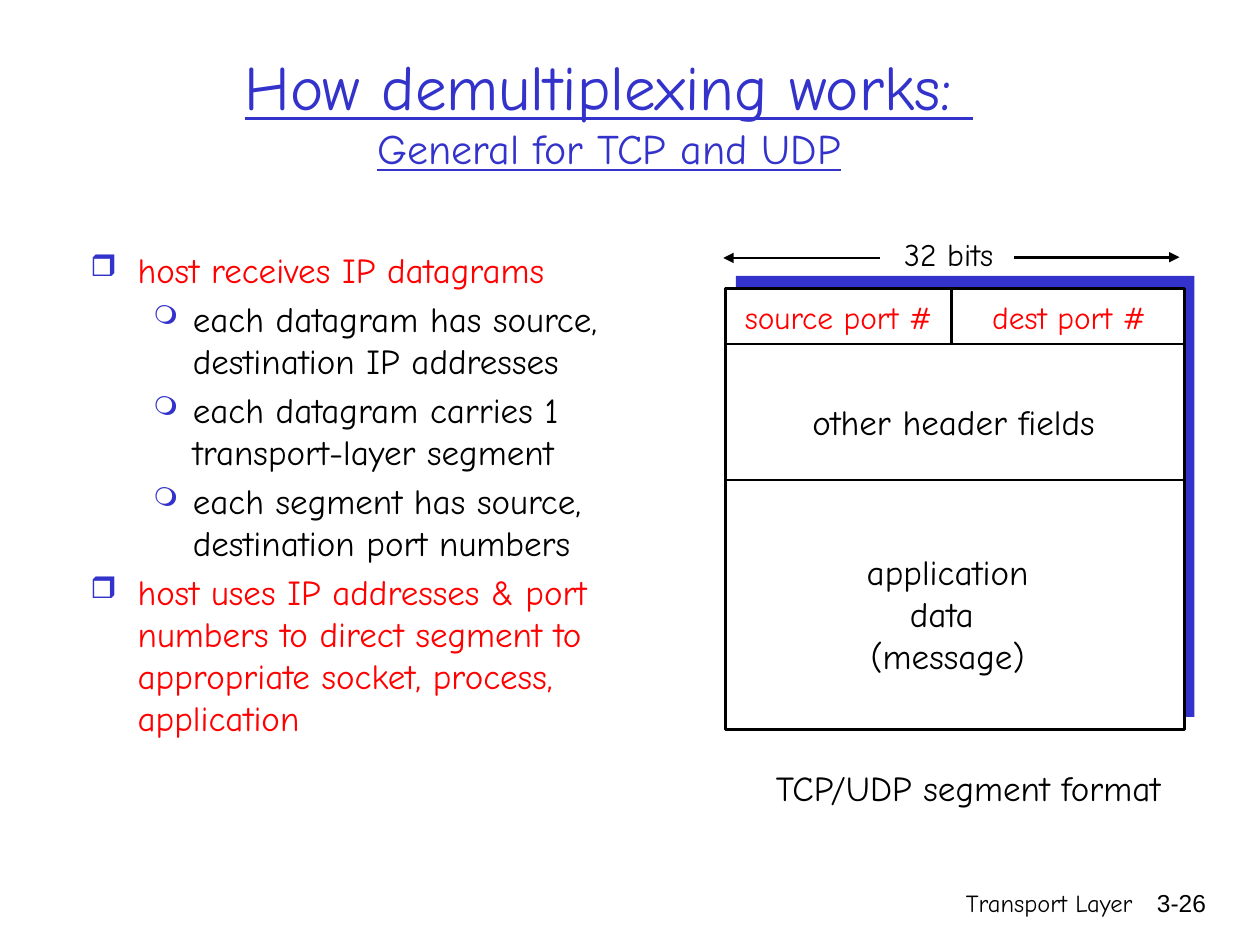
import copy

import pptx
import pptx.dml.color
import pptx.enum.shapes
import pptx.enum.text
import pptx.oxml.ns
import pptx.util
from lxml import etree

Pt = pptx.util.Pt
RGBColor = pptx.dml.color.RGBColor
ALIGN = pptx.enum.text.PP_ALIGN
ANCHOR = pptx.enum.text.MSO_ANCHOR
qn = pptx.oxml.ns.qn

BLUE = RGBColor(0x33, 0x33, 0xCC)
RED = RGBColor(0xFF, 0x00, 0x00)
BLACK = RGBColor(0x00, 0x00, 0x00)
WHITE = RGBColor(0xFF, 0xFF, 0xFF)
FONT = "Comic Neue"

SEGMENT_LEFT, SEGMENT_TOP = 414.7, 164.9
SEGMENT_WIDTH, SEGMENT_HEIGHT = 262, 252
SEGMENT_RIGHT = SEGMENT_LEFT + SEGMENT_WIDTH
PORTS_BOTTOM, HEADER_BOTTOM = 196.5, 274.3
PORT_DIVIDER = 543.6

# Level: left margin, bullet character, bullet width, bullet size in percent
BULLETS = {0: (27, "❒", 27, 85), 1: (58.5, "❍", 22.5, 75)}
POINTS = [
    (0, "host receives IP datagrams", RED),
    (1, "each datagram has source, destination IP addresses", BLACK),
    (1, "each datagram carries 1 transport-layer segment", BLACK),
    (1, "each segment has source, destination port numbers", BLACK),
    (0, "host uses IP addresses & port numbers to direct segment to "
        "appropriate socket, process, application", RED),
]


def add_run(para, text, size, color, font=FONT, underline=None):
    run = para.add_run()
    run.text = text
    run.font.size = Pt(size)
    run.font.name = font
    run.font.color.rgb = color
    run.font.underline = underline
    return run


def add_title(slide):
    title = slide.shapes.title
    title.left, title.top, title.width, title.height = Pt(42), Pt(18), Pt(612), Pt(90)
    frame = title.text_frame
    frame.auto_size = pptx.enum.text.MSO_AUTO_SIZE.NONE
    frame.vertical_anchor = ANCHOR.MIDDLE
    para = frame.paragraphs[0]
    para.alignment = ALIGN.CENTER
    heading = add_run(para, "How demultiplexing works: ", 36, BLUE, underline=True)
    para.add_line_break()
    # The break takes the heading's size, so that it does not stretch the line
    line_break = para._p.find(qn("a:br"))
    line_break.append(copy.deepcopy(heading.font._element))
    add_run(para, "General for TCP and UDP", 24, BLUE, underline=True)


def add_label(slide, lines, left, top, width, height, size=20, color=BLACK,
              font=FONT, align=ALIGN.CENTER):
    box = slide.shapes.add_textbox(Pt(left), Pt(top), Pt(width), Pt(height))
    frame = box.text_frame
    frame.word_wrap = False
    for index, line in enumerate(lines):
        para = frame.add_paragraph() if index else frame.paragraphs[0]
        para.alignment = align
        add_run(para, line, size, color, font)


def set_bullet(para, level):
    margin, character, width, percent = BULLETS[level]
    properties = para._p.get_or_add_pPr()
    properties.set("marL", str(Pt(margin)))
    properties.set("indent", str(-Pt(width)))
    color = etree.SubElement(properties, qn("a:buClr"))
    etree.SubElement(color, qn("a:srgbClr"), val=str(BLUE))
    etree.SubElement(properties, qn("a:buSzPct"), val=str(percent * 1000))
    etree.SubElement(properties, qn("a:buChar"), char=character)


def add_points(slide):
    box = slide.shapes.add_textbox(Pt(44.6), Pt(138.2), Pt(324), Pt(219.6))
    frame = box.text_frame
    frame.word_wrap = True
    for index, (level, text, color) in enumerate(POINTS):
        para = frame.add_paragraph() if index else frame.paragraphs[0]
        para.level = level
        para.space_before = Pt(4)
        set_bullet(para, level)
        add_run(para, text, 20, color)


def add_panel(slide, left, top, fill, outlined):
    panel = slide.shapes.add_shape(
        pptx.enum.shapes.MSO_SHAPE.RECTANGLE,
        Pt(left), Pt(top), Pt(SEGMENT_WIDTH), Pt(SEGMENT_HEIGHT))
    panel.shadow.inherit = False
    panel.fill.solid()
    panel.fill.fore_color.rgb = fill
    if outlined:
        panel.line.color.rgb = BLACK
        panel.line.width = Pt(1.5)
    else:
        panel.line.fill.background()


def add_line(slide, start, end, arrow=False):
    line = slide.shapes.add_connector(
        pptx.enum.shapes.MSO_CONNECTOR.STRAIGHT,
        Pt(start[0]), Pt(start[1]), Pt(end[0]), Pt(end[1]))
    line.line.color.rgb = BLACK
    line.line.width = Pt(1.5)
    if arrow:
        etree.SubElement(line.line._get_or_add_ln(), qn("a:tailEnd"), type="triangle")
    etree.SubElement(line._element.spPr, qn("a:effectLst"))


def add_segment(slide):
    add_panel(slide, SEGMENT_LEFT + 5.8, SEGMENT_TOP - 7.2, BLUE, outlined=False)
    add_panel(slide, SEGMENT_LEFT, SEGMENT_TOP, WHITE, outlined=True)
    for y in (PORTS_BOTTOM, HEADER_BOTTOM):
        add_line(slide, (SEGMENT_LEFT, y), (SEGMENT_RIGHT, y))
    add_line(slide, (PORT_DIVIDER, PORTS_BOTTOM), (PORT_DIVIDER, SEGMENT_TOP))

    add_label(slide, ["source port #"], 413.3, 167, 131.8, 28.8, 18, RED)
    add_label(slide, ["dest port #"], 553.7, 167, 114.5, 28.8, 18, RED)
    add_label(slide, ["other header fields"], 446.4, 225.4, 197.3, 31)
    add_label(slide, ["application", "data ", "(message)"], 484.6, 311, 113.8, 79.2)
    add_label(slide, ["TCP/UDP segment format"], 425.5, 434.2, 255.6, 31)


def add_width_marker(slide):
    add_label(slide, ["32 bits"], 504.7, 131, 74.9, 28.8, 18)
    add_line(slide, (579.6, 147), (674, 147), arrow=True)
    add_line(slide, (502.6, 147.4), (413.3, 147.4), arrow=True)


def add_footer(slide):
    add_label(slide, ["Transport Layer"], 426.2, 504, 228.2, 36, 14, align=ALIGN.RIGHT)
    add_label(slide, ["3-26"], 643, 504, 53.3, 36, 14, font="Arial", align=ALIGN.RIGHT)


def main():
    deck = pptx.Presentation()
    deck.slide_width, deck.slide_height = Pt(720), Pt(540)
    slide = deck.slides.add_slide(deck.slide_layouts.get_by_name("Title Only"))
    add_title(slide)
    add_points(slide)
    add_segment(slide)
    add_width_marker(slide)
    add_footer(slide)
    deck.save("out.pptx")


if __name__ == "__main__":
    main()
